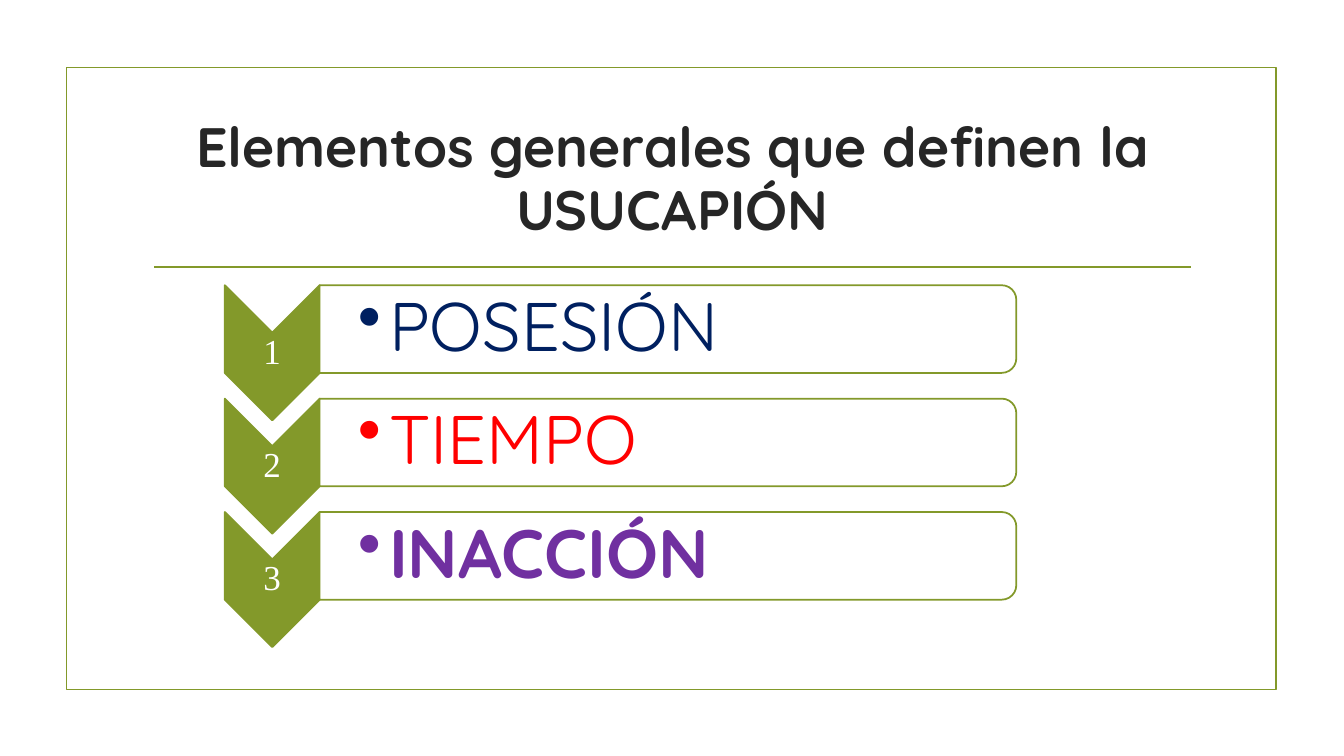
from pptx import Presentation
from pptx.dml.color import RGBColor
from pptx.enum.shapes import MSO_CONNECTOR, MSO_SHAPE
from pptx.enum.text import MSO_ANCHOR, MSO_AUTO_SIZE, PP_ALIGN
from pptx.oxml.ns import qn
from pptx.util import Inches, Pt
from lxml import etree

CHEVRON = MSO_SHAPE.CHEVRON
PANEL = MSO_SHAPE.ROUND_2_SAME_RECTANGLE
RECTANGLE = MSO_SHAPE.RECTANGLE
STRAIGHT = MSO_CONNECTOR.STRAIGHT
MIDDLE = MSO_ANCHOR.MIDDLE
CENTER = PP_ALIGN.CENTER
NO_AUTOFIT = MSO_AUTO_SIZE.NONE
TITLE_ONLY = 5

COLORS = {
    "olive": "83992A", "white": "FFFFFF", "ink": "262626",
    "navy": "002060", "red": "FF0000", "purple": "7030A0",
}
LINE_WIDTH = Pt(1.25)
STEPS = [("POSESIÓN", "navy", False), ("TIEMPO", "red", False), ("INACCIÓN", "purple", True)]
STEP_PITCH = 1.125


def rgb(name):
    return RGBColor.from_string(COLORS[name])


def style_font(font, face, size, color, bold=False):
    font.name, font.size, font.bold = face, Pt(size), bold
    font.color.rgb = rgb(color)


def add_outlined(slide, kind, box, fill=None, quarter_turn=False):
    """Add an olive-edged shape that covers box, also when turned by 90 degrees."""
    left, top, width, height = box
    if quarter_turn:
        left, top = left + (width - height) / 2, top + (height - width) / 2
        width, height = height, width
    shape = slide.shapes.add_shape(kind, *map(Inches, (left, top, width, height)))
    shape.rotation = 90 if quarter_turn else 0
    shape.shadow.inherit = False
    shape.line.color.rgb, shape.line.width = rgb("olive"), LINE_WIDTH
    if fill:
        shape.fill.solid()
        shape.fill.fore_color.rgb = rgb(fill)
    else:
        shape.fill.background()
    return shape


def add_label(slide, box, text, inset, left_inset):
    """Add a vertically centred text box and return its paragraph."""
    frame = slide.shapes.add_textbox(*map(Inches, box)).text_frame
    frame.word_wrap, frame.vertical_anchor = True, MIDDLE
    frame.margin_top = frame.margin_right = frame.margin_bottom = Inches(inset)
    frame.margin_left = Inches(left_inset)
    para = frame.paragraphs[0]
    para.text, para.line_spacing = text, 0.9
    return para


def add_bullet(para, indent):
    properties = para._p.get_or_add_pPr()
    properties.set("marL", str(Inches(indent)))
    properties.set("indent", str(-Inches(indent)))
    etree.SubElement(properties, qn("a:buChar")).set("char", "•")


def add_heading(slide, box):
    left, top, width, height = box
    title = slide.shapes.title
    title.left, title.top, title.width, title.height = map(Inches, box)
    frame = title.text_frame
    frame.word_wrap, frame.vertical_anchor, frame.auto_size = True, MIDDLE, NO_AUTOFIT
    para = frame.paragraphs[0]
    para.text = "Elementos generales que definen la USUCAPIÓN"
    para.alignment, para.line_spacing = CENTER, 0.95
    style_font(para.font, "Quicksand", 39.6, "ink", True)

    rule_y = Inches(top + height + 0.15)
    rule = slide.shapes.add_connector(
        STRAIGHT, Inches(left + 0.11), rule_y, Inches(left + width - 0.11), rule_y)
    rule.line.color.rgb, rule.line.width = rgb("olive"), LINE_WIDTH
    etree.SubElement(rule._element.spPr, qn("a:effectLst"))


def add_step(slide, box, number, text, color, bold):
    left, top, width, height = box
    arrow_width, panel_height = 0.94, 0.87
    panel_left, panel_width = left + arrow_width, width - arrow_width
    add_outlined(slide, CHEVRON, (left, top, arrow_width, height), "olive", True)
    para = add_label(slide, (left, top + arrow_width / 2, arrow_width, 0.4),
                     str(number), 0.02, 0.02)
    para.alignment = CENTER
    style_font(para.font, "Times New Roman", 25, "white")

    panel = add_outlined(slide, PANEL, (panel_left, top, panel_width, panel_height), "white", True)
    fill_color = panel._element.spPr.find(qn("a:solidFill"))[0]
    etree.SubElement(fill_color, qn("a:alpha")).set("val", "90000")
    para = add_label(slide, (panel_left, top + 0.04, panel_width - 0.04, panel_height - 0.08),
                     text, 0.03, 0.38)
    add_bullet(para, 0.31)
    style_font(para.font, "Quicksand", 49, color, bold)


def add_steps(slide, box):
    left, top, width, height = box
    step_height = height - STEP_PITCH * (len(STEPS) - 1)
    for index, step in enumerate(STEPS):
        step_box = (left, top + index * STEP_PITCH, width, step_height)
        add_step(slide, step_box, index + 1, *step)


def main():
    deck = Presentation()
    deck.slide_width, deck.slide_height = Inches(13.33), Inches(7.5)
    slide = deck.slides.add_slide(deck.slide_layouts[TITLE_ONLY])
    add_outlined(slide, RECTANGLE, (0.66, 0.67, 12, 6.17))
    add_heading(slide, (1.42, 1.07, 10.5, 1.43))
    add_steps(slide, (2.23, 2.83, 7.85, 3.59))
    deck.save("out.pptx")


if __name__ == "__main__":
    main()
